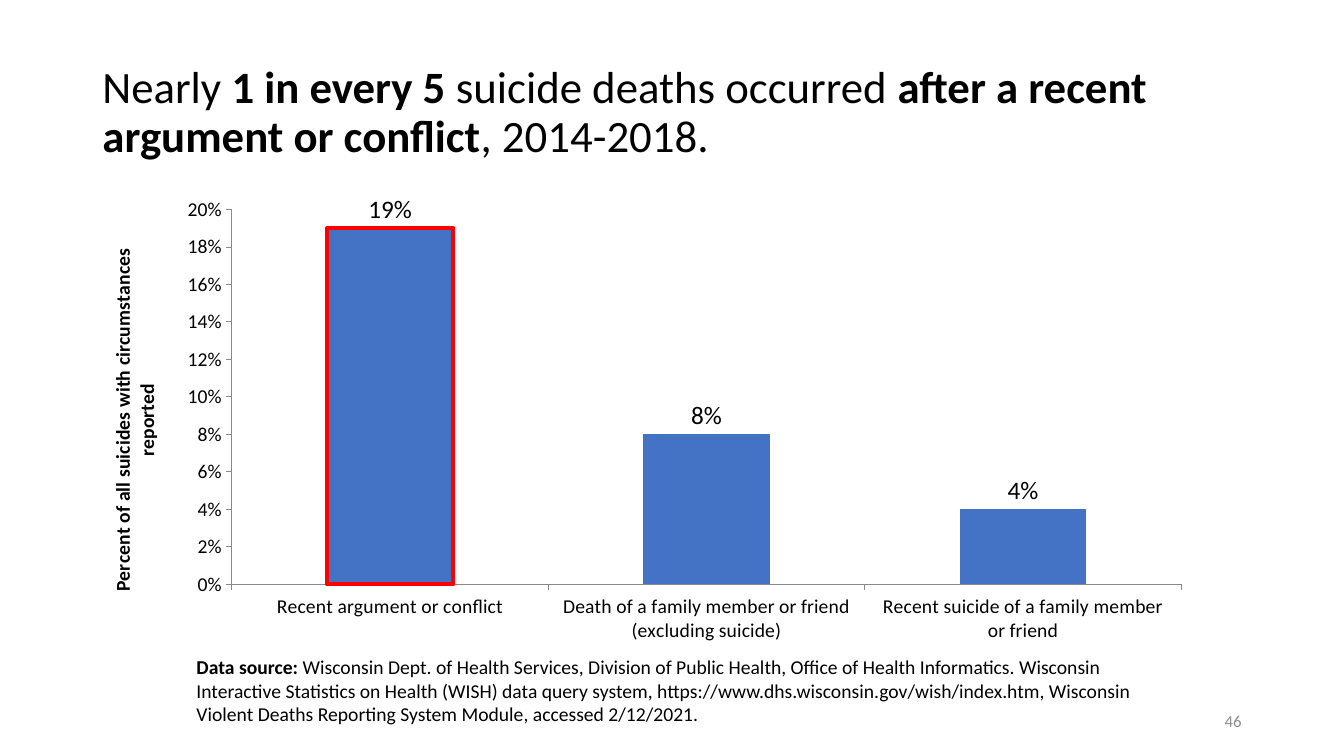
"""Build a slide with a column chart of circumstances before suicide deaths."""
from lxml import etree
from pptx import Presentation
from pptx.chart.data import CategoryChartData
from pptx.dml.color import RGBColor
from pptx.enum.chart import XL_CHART_TYPE, XL_LABEL_POSITION, XL_TICK_MARK
from pptx.enum.text import MSO_ANCHOR, MSO_AUTO_SIZE, PP_ALIGN
from pptx.oxml.ns import qn
from pptx.util import Pt

COLUMN = XL_CHART_TYPE.COLUMN_CLUSTERED
OUTSIDE_END = XL_LABEL_POSITION.OUTSIDE_END
TICK_OUT = XL_TICK_MARK.OUTSIDE
TOP, MIDDLE = MSO_ANCHOR.TOP, MSO_ANCHOR.MIDDLE
LEFT, RIGHT = PP_ALIGN.LEFT, PP_ALIGN.RIGHT

FONT = "Calibri"
BLACK, GRAY, AXIS, BLUE, RED = "000000", "8C8C8C", "898989", "4472C4", "FF0000"

TITLE = [
    ("Nearly ", False),
    ("1 in every 5 ", True),
    ("suicide deaths occurred ", False),
    ("after a recent argument or conflict", True),
    (", 2014-2018.", False),
]
SOURCE = [
    ("Data source: ", True),
    ("Wisconsin Dept. of Health Services, Division of Public Health, Office of "
     "Health Informatics. Wisconsin Interactive Statistics on Health (WISH) data "
     "query system, https://www.dhs.wisconsin.gov/wish/index.htm, Wisconsin "
     "Violent Deaths Reporting System Module, accessed 2/12/2021.", False),
]
PAGE = [("46", False)]
AXIS_TITLE = [("Percent of all suicides with circumstances reported", True)]
RATES = {
    "Recent argument or conflict": 0.19,
    "Death of a family member or friend (excluding suicide)": 0.08,
    "Recent suicide of a family member or friend": 0.04,
}

SLIDE_SIZE = (960, 540)
TITLE_BOX = (66, 28.75, 828, 104.4)
CHART_BOX = (62, 133.2, 797.75, 330.5)
SOURCE_BOX = (133.2, 464.4, 692.6, 80)
PAGE_BOX = (678, 500.5, 216, 28.75)
PLOT = {"x": 0.13, "y": 0.05, "w": 0.85, "h": 0.81}


def rgb(color):
    return RGBColor.from_string(color)


def set_font(font, size, color=BLACK, bold=False):
    font.name = FONT
    font.size = Pt(size)
    font.bold = bold
    font.color.rgb = rgb(color)


def write(tf, runs, size, color=BLACK, align=LEFT):
    p = tf.paragraphs[0]
    p.alignment = align
    for text, bold in runs:
        r = p.add_run()
        r.text = text
        set_font(r.font, size, color, bold)
    return p


def set_frame(tf, anchor):
    tf.word_wrap = True
    tf.auto_size = MSO_AUTO_SIZE.NONE
    tf.vertical_anchor = anchor


def add_text(slide, box, runs, size, color=BLACK, align=LEFT, anchor=TOP):
    tf = slide.shapes.add_textbox(*map(Pt, box)).text_frame
    set_frame(tf, anchor)
    write(tf, runs, size, color, align)


def add_title(slide):
    sp = slide.shapes.title
    sp.left, sp.top, sp.width, sp.height = map(Pt, TITLE_BOX)
    set_frame(sp.text_frame, MIDDLE)
    write(sp.text_frame, TITLE, 32).line_spacing = 0.9


def place_plot(chart):
    area = chart._chartSpace.chart.plotArea
    for old in area.findall(qn("c:layout")):
        area.remove(old)
    layout = etree.Element(qn("c:layout"))
    manual = etree.SubElement(layout, qn("c:manualLayout"))
    settings = {"layoutTarget": "inner", "xMode": "edge", "yMode": "edge", **PLOT}
    for tag, value in settings.items():
        etree.SubElement(manual, qn(f"c:{tag}")).set("val", str(value))
    area.insert(0, layout)


def add_rates_chart(slide):
    data = CategoryChartData(number_format="0%")
    data.categories = list(RATES)
    data.add_series("Series 1", list(RATES.values()))
    chart = slide.shapes.add_chart(COLUMN, *map(Pt, CHART_BOX), data).chart
    chart.has_title = False
    chart.has_legend = False
    set_font(chart.font, 18)
    place_plot(chart)

    for axis in (chart.category_axis, chart.value_axis):
        axis.has_major_gridlines = False
        axis.major_tick_mark = TICK_OUT
        axis.format.line.color.rgb = rgb(AXIS)
        set_font(axis.tick_labels.font, 14)
    rate_axis = chart.value_axis
    rate_axis.minimum_scale, rate_axis.maximum_scale = 0, 0.2
    rate_axis.major_unit = 0.02
    rate_axis.tick_labels.number_format = "0%"
    rate_axis.tick_labels.number_format_is_linked = False
    write(rate_axis.axis_title.text_frame, AXIS_TITLE, 14, align=PP_ALIGN.CENTER)

    plot = chart.plots[0]
    plot.gap_width = 150
    plot.vary_by_categories = False
    series = plot.series[0]
    series.format.fill.solid()
    series.format.fill.fore_color.rgb = rgb(BLUE)
    labels = series.data_labels
    labels.show_value = True
    labels.position = OUTSIDE_END
    labels.number_format = "0%"
    labels.number_format_is_linked = False
    set_font(labels.font, 18)

    highlight = series.points[0].format
    highlight.fill.solid()
    highlight.fill.fore_color.rgb = rgb(BLUE)
    highlight.line.color.rgb = rgb(RED)
    highlight.line.width = Pt(3)


def main():
    prs = Presentation()
    prs.slide_width, prs.slide_height = map(Pt, SLIDE_SIZE)
    slide = prs.slides.add_slide(prs.slide_layouts[5])
    add_title(slide)
    add_text(slide, SOURCE_BOX, SOURCE, 14)
    add_rates_chart(slide)
    add_text(slide, PAGE_BOX, PAGE, 12, GRAY, RIGHT, MIDDLE)
    prs.save("out.pptx")


if __name__ == "__main__":
    main()
